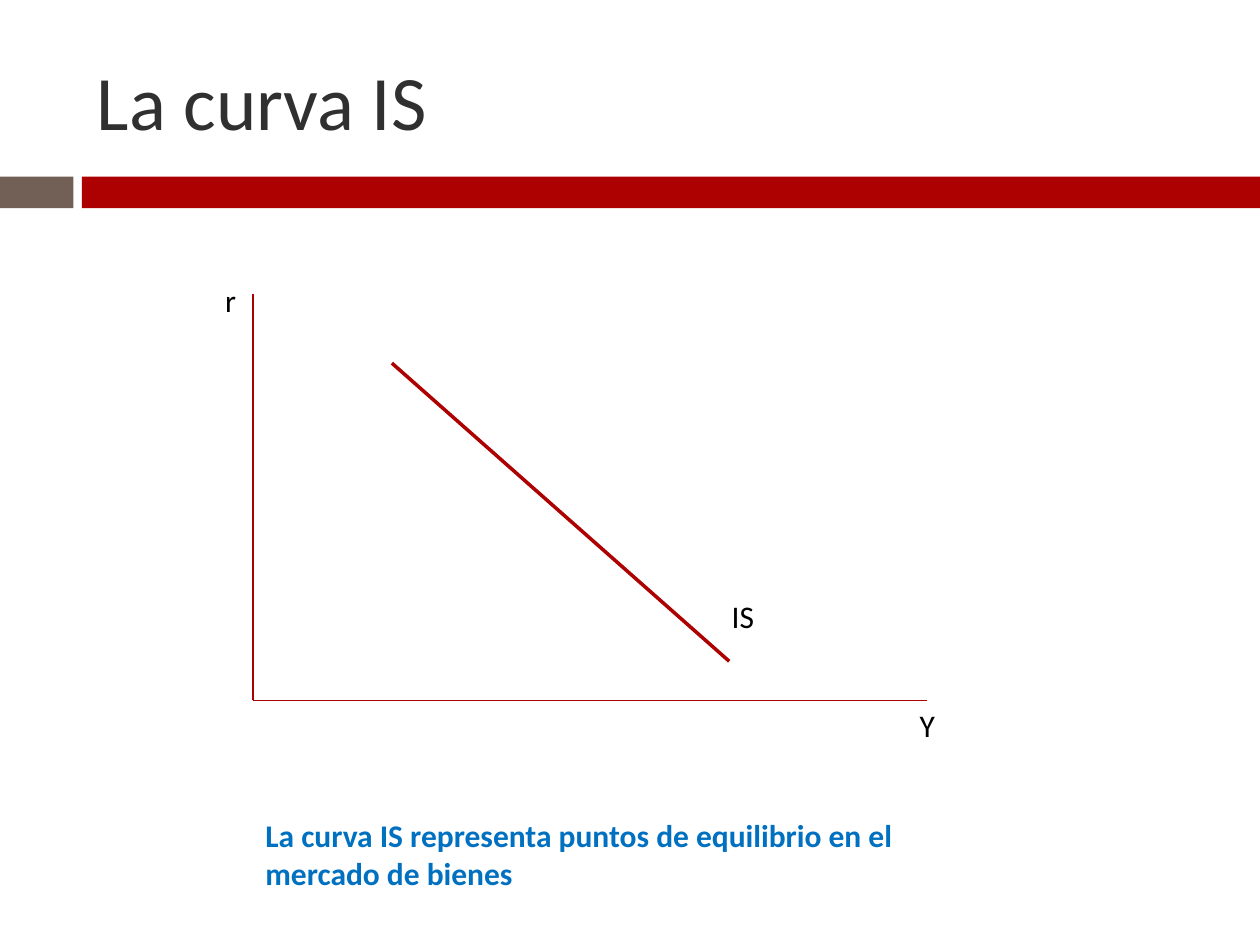
from lxml import etree
from pptx import Presentation
from pptx.dml.color import RGBColor
from pptx.enum.shapes import MSO_CONNECTOR, MSO_SHAPE
from pptx.enum.text import MSO_ANCHOR, PP_ALIGN
from pptx.oxml.ns import qn
from pptx.util import Cm, Pt

STRAIGHT = MSO_CONNECTOR.STRAIGHT
RECTANGLE = MSO_SHAPE.RECTANGLE
MIDDLE = MSO_ANCHOR.MIDDLE
TOP = MSO_ANCHOR.TOP
LEFT = PP_ALIGN.LEFT

RED = "AD0101"
TAUPE = "726056"
CHARCOAL = "303030"
BLACK = "000000"
BLUE = "0070C0"
FONT = "Calibri"

SLIDE_WIDTH = 25.4
SLIDE_HEIGHT = 19.05
BAND_TOP = 3.56
BAND_HEIGHT = 0.64
ORIGIN = (5.1, 14.12)
R_AXIS_TOP = 5.92
Y_AXIS_END = 18.69
LABEL_HEIGHT = 1.02


def color(hex_value):
    return RGBColor.from_string(hex_value)


def write(holder, text, size=18, ink=BLACK, bold=False, anchor=TOP):
    frame = holder.text_frame
    frame.word_wrap = True
    frame.vertical_anchor = anchor
    paragraph = frame.paragraphs[0]
    paragraph.alignment = LEFT
    run = paragraph.add_run()
    run.text = text
    run.font.name = FONT
    run.font.size = Pt(size)
    run.font.bold = bold
    run.font.color.rgb = color(ink)


def place(holder, left, top, width, height):
    holder.left, holder.top = Cm(left), Cm(top)
    holder.width, holder.height = Cm(width), Cm(height)


def add_title(slide, text):
    title = slide.shapes.title
    place(title, 1.7, 0.64, 22.66, 2.74)
    write(title, text, size=44, ink=CHARCOAL, anchor=MIDDLE)


def add_label(slide, text, left, top, width, height=LABEL_HEIGHT, **text_format):
    label = slide.shapes.add_textbox(Cm(left), Cm(top), Cm(width), Cm(height))
    write(label, text, **text_format)


def add_band(slide, left, right, fill):
    band = slide.shapes.add_shape(
        RECTANGLE, Cm(left), Cm(BAND_TOP), Cm(right - left), Cm(BAND_HEIGHT))
    band.shadow.inherit = False
    band.fill.solid()
    band.fill.fore_color.rgb = color(fill)
    band.line.fill.background()


def add_line(slide, start, end, weight):
    line = slide.shapes.add_connector(
        STRAIGHT, *(Cm(value) for value in (*start, *end)))
    line.line.color.rgb = color(RED)
    line.line.width = Pt(weight)
    etree.SubElement(line._element.spPr, qn("a:effectLst"))


def main():
    deck = Presentation()
    deck.slide_width = Cm(SLIDE_WIDTH)
    deck.slide_height = Cm(SLIDE_HEIGHT)
    slide = deck.slides.add_slide(deck.slide_layouts[5])

    add_band(slide, 0, 1.48, TAUPE)
    add_band(slide, 1.65, SLIDE_WIDTH, RED)
    add_title(slide, "La curva IS")

    add_line(slide, (ORIGIN[0], R_AXIS_TOP), ORIGIN, 0.79)
    add_line(slide, ORIGIN, (Y_AXIS_END, ORIGIN[1]), 0.79)
    add_line(slide, (7.9, 7.32), (14.7, 13.33), 2)

    add_label(slide, "IS", 14.5, 11.91, 1.4)
    add_label(slide, "Y", 18.29, 14.1, 3.4)
    add_label(slide, "r", 4.29, 5.54, 0.79)
    add_label(slide, "La curva IS representa puntos de equilibrio en el mercado de bienes",
              ORIGIN[0], 16.33, 14.91, 1.8, ink=BLUE, bold=True)

    deck.save("out.pptx")


if __name__ == "__main__":
    main()
